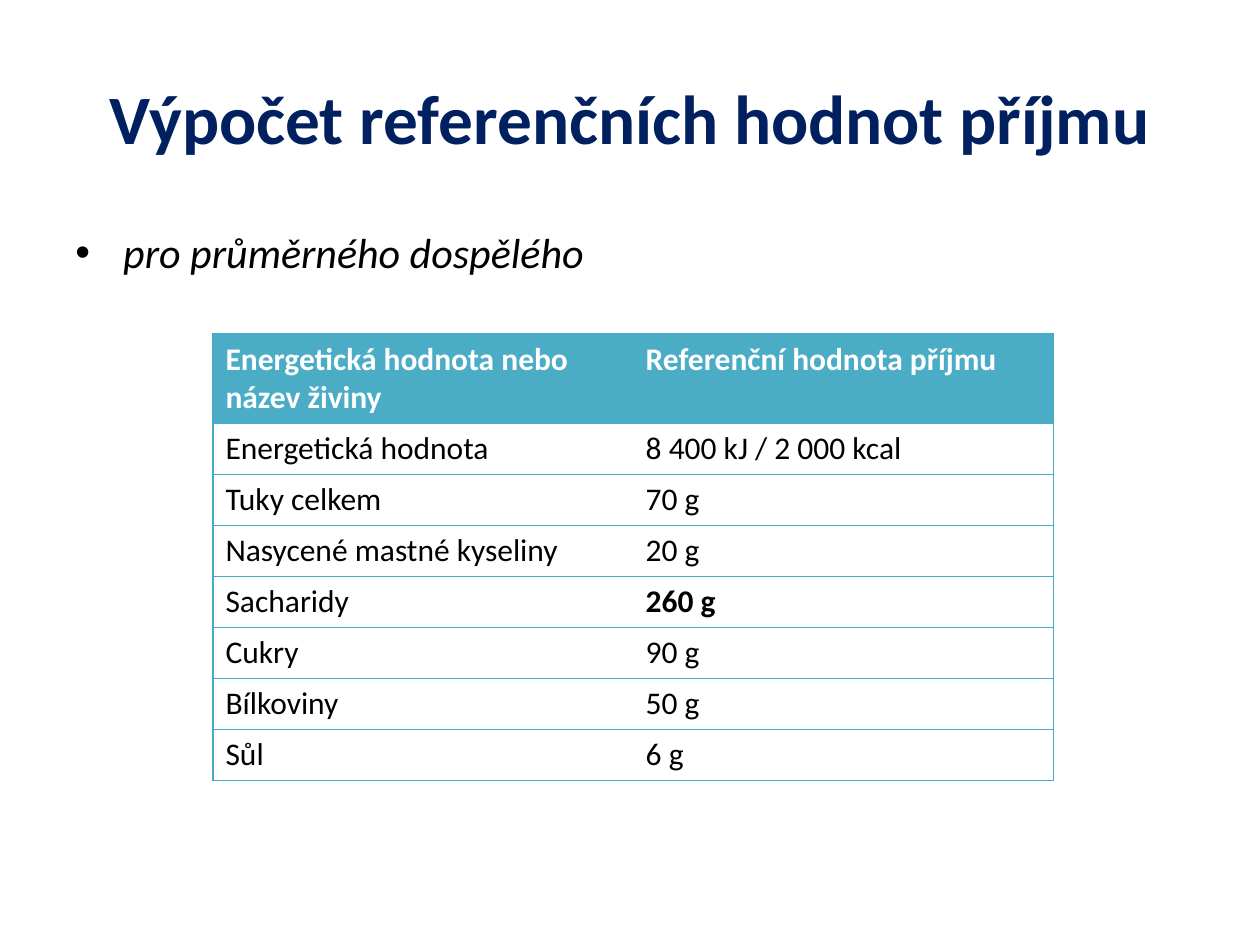
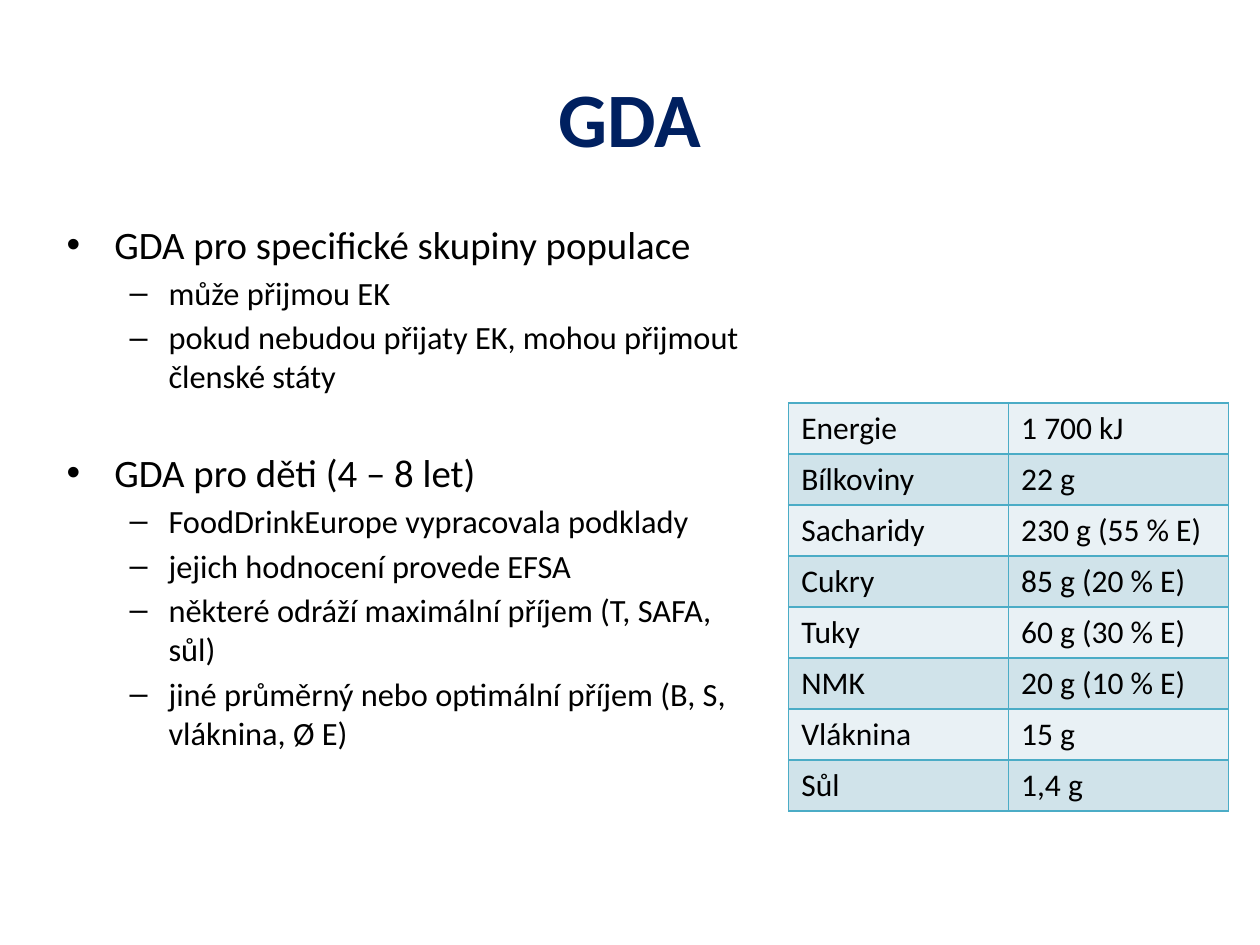
from dataclasses import dataclass

from lxml import etree
from pptx import Presentation
from pptx import util as u
from pptx.dml.color import RGBColor
from pptx.enum import text
from pptx.oxml import ns


@dataclass(frozen=True)
class Theme:
    font: str = "Calibri"
    bullet_font: str = "Arial"
    navy: str = "002060"
    black: str = "000000"
    white: str = "FFFFFF"
    header: str = "4BACC6"
    rule: str = "46AAC5"
    bands: tuple = ("E9F1F5", "D0E3EA")
    title_size: float = 44
    long_title_size: float = 39.6
    lead_size: float = 24
    point_size: float = 22.2
    detail_size: float = 18.5
    table_size: float = 18


THEME = Theme()
UNIT = u.Inches(0.25)  # the slide is a grid of 40 columns by 30 rows
COLUMNS, ROWS = 40, 30
TABLE_ROW, HEADER_ROW = 1.62, 2.84
# level: bullet sign, text indent and hanging indent in inches
BULLETS = {0: ("•", 0.38, 0.38), 1: ("–", 0.81, 0.31)}

INTAKE_ROWS = [
    ("Energetická hodnota nebo název živiny", "Referenční hodnota příjmu"),
    ("Energetická hodnota", "8 400 kJ / 2 000 kcal"),
    ("Tuky celkem", "70 g"),
    ("Nasycené mastné kyseliny", "20 g"),
    ("Sacharidy", "260 g"),
    ("Cukry", "90 g"),
    ("Bílkoviny", "50 g"),
    ("Sůl", "6 g"),
]
CHILD_ROWS = [
    ("Energie", "1 700 kJ"),
    ("Bílkoviny", "22 g"),
    ("Sacharidy", "230 g (55 % E)"),
    ("Cukry", "85 g (20 % E)"),
    ("Tuky", "60 g (30 % E)"),
    ("NMK", "20 g (10 % E)"),
    ("Vláknina", "15 g"),
    ("Sůl", "1,4 g"),
]
GDA_POINTS = [
    ("GDA pro specifické skupiny populace", [
        "může přijmou EK",
        "pokud nebudou přijaty EK, mohou přijmout členské státy",
    ]),
    ("GDA pro děti (4 – 8 let)", [
        "FoodDrinkEurope vypracovala podklady",
        "jejich hodnocení provede EFSA",
        "některé odráží maximální příjem (T, SAFA, sůl)",
        "jiné průměrný nebo optimální příjem (B, S, vláknina, Ø E)",
    ]),
]


def grid(*lengths):
    return [round(length * UNIT) for length in lengths]


def style(font, size, color=THEME.black, **formats):
    values = {"name": THEME.font, "size": u.Pt(size), **formats}
    for name, value in values.items():
        setattr(font, name, value)
    font.color.rgb = RGBColor.from_string(color)


# Slide with a formatted title
def add_titled_page(deck, title, size):
    page = deck.slides.add_slide(deck.slide_layouts[5])
    box = page.shapes.title
    box.left, box.top, box.width, box.height = grid(2, 1.2, 36, 5)
    frame = box.text_frame
    frame.text = title
    frame.vertical_anchor = text.MSO_ANCHOR.MIDDLE
    para = frame.paragraphs[0]
    para.alignment = text.PP_ALIGN.CENTER
    style(para.runs[0].font, size, THEME.navy, bold=True)
    return page


# Bulleted text
def add_text_area(page, *area):
    frame = page.shapes.add_textbox(*grid(*area)).text_frame
    frame.word_wrap = True
    return frame


def add_bullet(frame, words, size, level=0, space=0, **formats):
    first = not frame.text
    para = frame.paragraphs[0] if first else frame.add_paragraph()
    para.level = level
    para.space_before = u.Pt(0 if first else space)
    sign, indent, hanging = BULLETS[level]
    props = para._p.get_or_add_pPr()
    props.set("marL", str(u.Inches(indent)))
    props.set("indent", str(-u.Inches(hanging)))
    etree.SubElement(props, ns.qn("a:buFont"), typeface=THEME.bullet_font)
    etree.SubElement(props, ns.qn("a:buChar"), char=sign)
    span = para.add_run()
    span.text = words
    style(span.font, size, **formats)


# Tables
def set_borders(cell, color, width, sides):
    props = cell._tc.get_or_add_tcPr()
    for side in "LRTB":
        line = etree.SubElement(props, ns.qn(f"a:ln{side}"), w=str(u.Pt(width)))
        if side in sides:
            fill = etree.SubElement(line, ns.qn("a:solidFill"))
            etree.SubElement(fill, ns.qn("a:srgbClr"), val=color)
        else:
            etree.SubElement(line, ns.qn("a:noFill"))


def add_plain_table(page, rows, left, top, width):
    area = grid(left, top, width, TABLE_ROW * len(rows))
    table = page.shapes.add_table(len(rows), len(rows[0]), *area).table
    table.first_row = table.horz_banding = False
    for row, values in zip(table.rows, rows):
        row.height = grid(TABLE_ROW)[0]
        for cell, words in zip(row.cells, values):
            cell.text = words
    return table


def format_cell(cell, fill=None, **formats):
    if fill:
        cell.fill.solid()
        cell.fill.fore_color.rgb = RGBColor.from_string(fill)
    else:
        cell.fill.background()
    style(cell.text_frame.paragraphs[0].runs[0].font, THEME.table_size, **formats)


def add_intake_table(page):
    table = add_plain_table(page, INTAKE_ROWS, 6.76, 10.6, 26.68)
    table.rows[0].height = grid(HEADER_ROW)[0]
    for index, row in enumerate(table.rows):
        for cell, outer_side in zip(row.cells, "LR"):
            set_borders(cell, THEME.rule, 0.75, outer_side + "TB")
            if index == 0:
                format_cell(cell, THEME.header, color=THEME.white, bold=True)
            else:
                format_cell(cell, bold=cell.text == "260 g")


def add_child_table(page):
    table = add_plain_table(page, CHILD_ROWS, 25.04, 12.8, 13.96)
    for index, row in enumerate(table.rows):
        for cell in row.cells:
            set_borders(cell, THEME.header, 1, "LRTB")
            format_cell(cell, THEME.bands[index % 2])


def main():
    deck = Presentation()
    deck.slide_width, deck.slide_height = grid(COLUMNS, ROWS)

    # Reference intake of an adult
    page = add_titled_page(deck, "Výpočet referenčních hodnot příjmu",
                           THEME.long_title_size)
    frame = add_text_area(page, 2, 7, 36, 19.8)
    add_bullet(frame, "pro průměrného dospělého", THEME.lead_size, italic=True)
    add_intake_table(page)

    # Daily amounts for specific groups
    page = add_titled_page(deck, "GDA", THEME.title_size)
    frame = add_text_area(page, 1.72, 6.8, 22.72, 17.96)
    for point, details in GDA_POINTS:
        add_bullet(frame, point, THEME.point_size, space=30.5)
        for detail in details:
            add_bullet(frame, detail, THEME.detail_size, level=1, space=3.3)
    add_child_table(page)

    deck.save("out.pptx")


if __name__ == "__main__":
    main()
